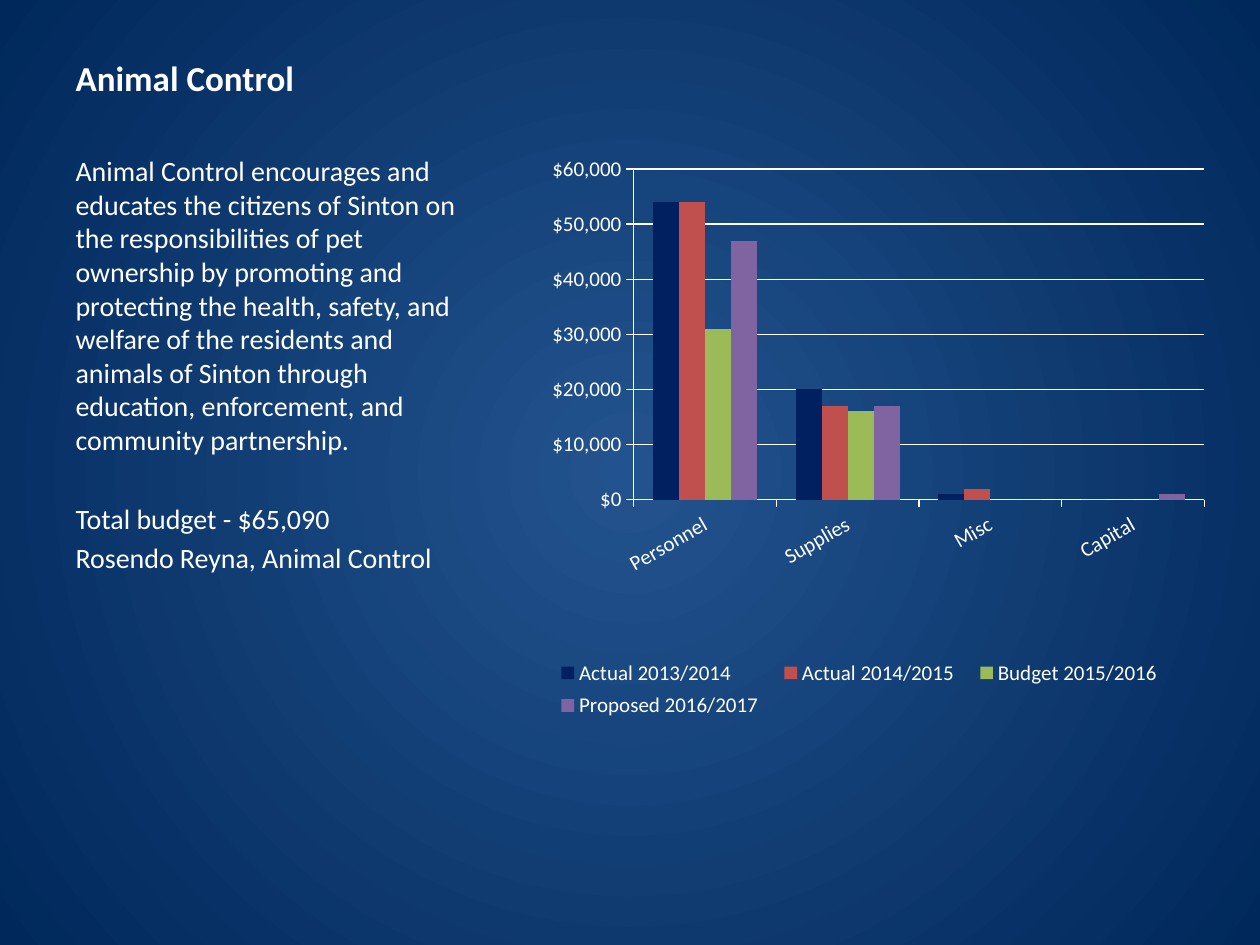
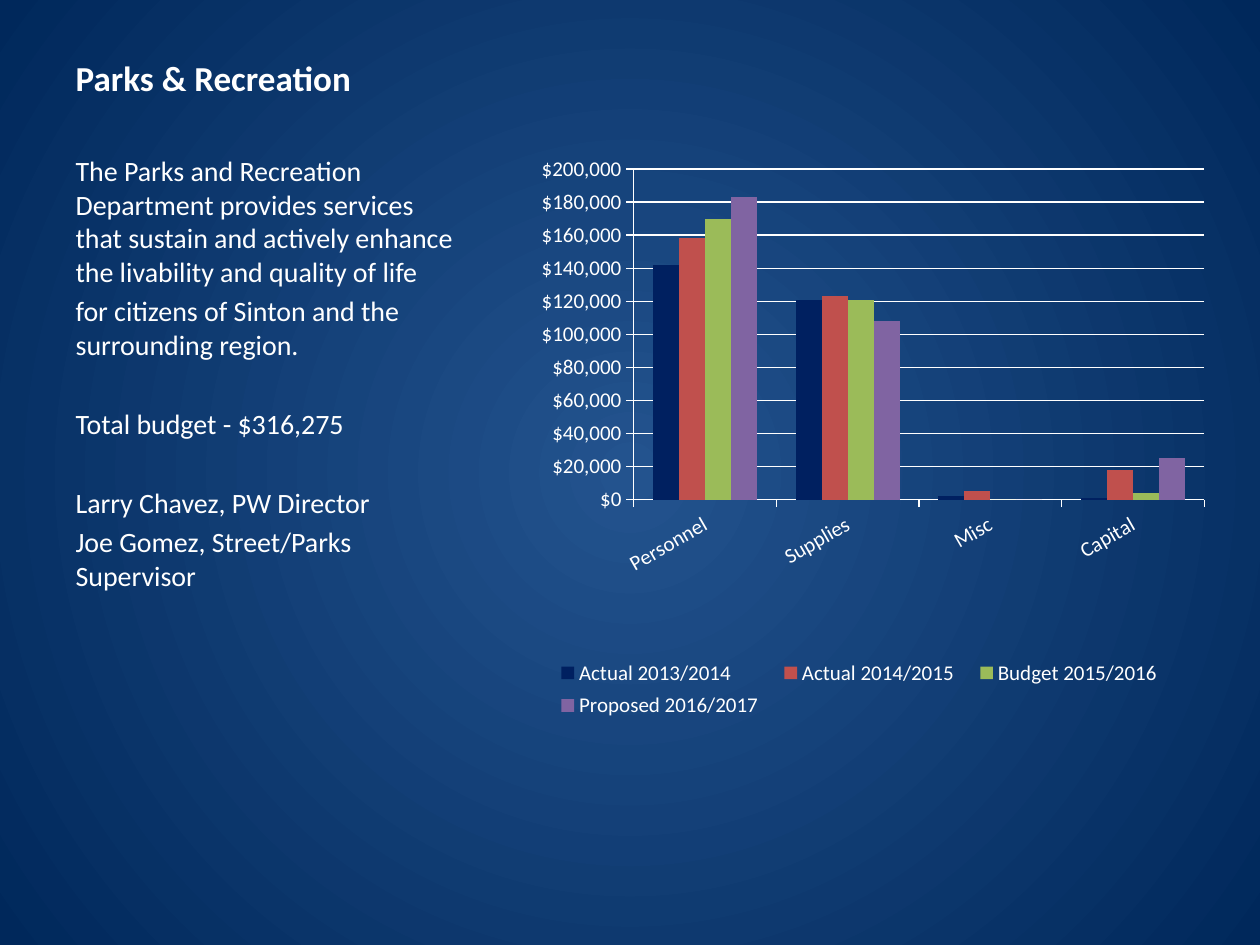
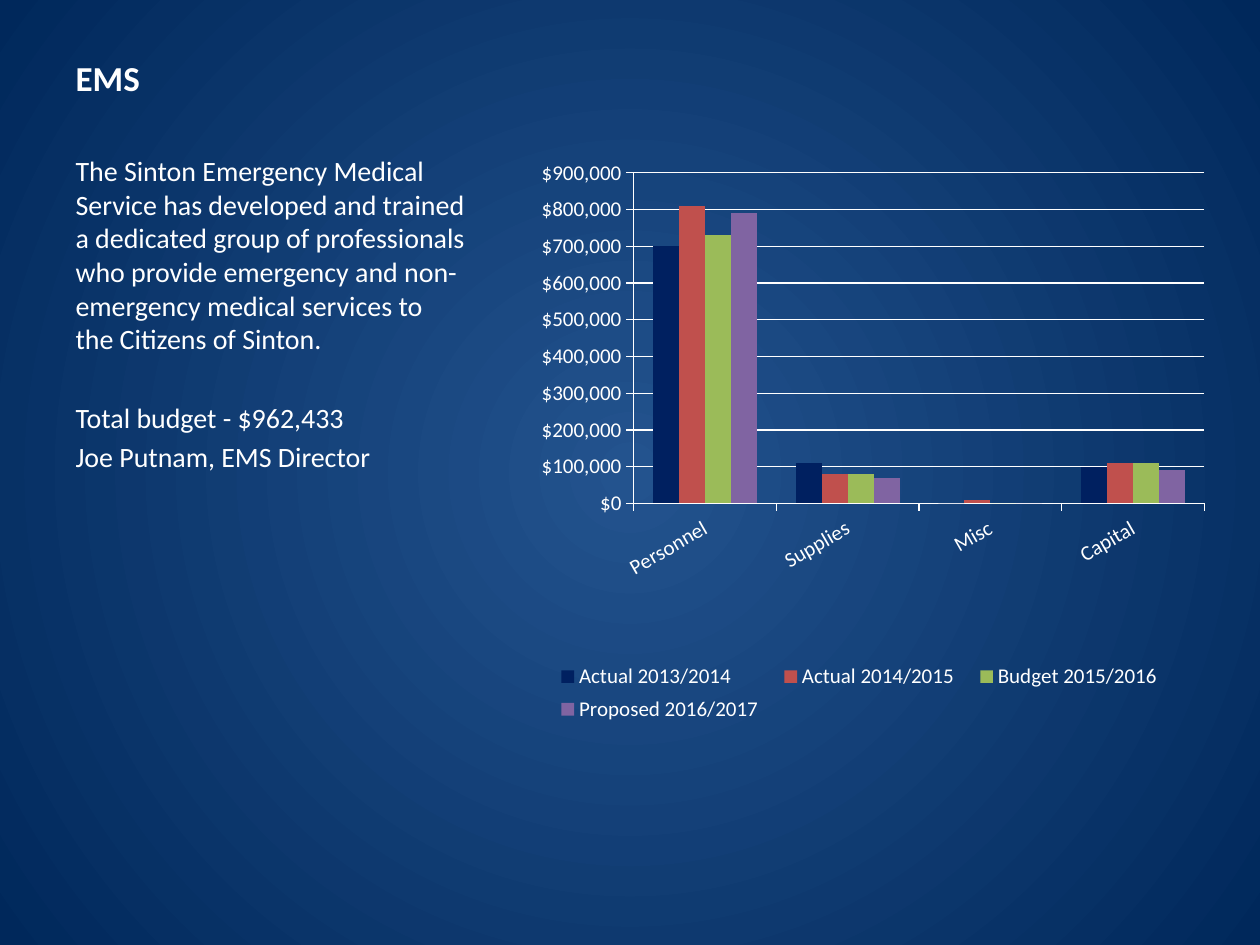
"""Build three department budget slides, each with a summary and a column chart."""
from lxml.etree import SubElement
from pptx import Presentation
from pptx.chart.data import CategoryChartData
from pptx.dml.color import RGBColor
from pptx.enum.chart import XL_CHART_TYPE, XL_LEGEND_POSITION, XL_TICK_MARK
from pptx.oxml import parse_xml
from pptx.oxml.ns import nsdecls, qn
from pptx.util import Inches, Pt

FONT = "Calibri"
WHITE = "FFFFFF"
CATEGORIES = ["Personnel", "Supplies", "Misc", "Capital"]
SERIES = [
    ("Actual 2013/2014", "002060"),
    ("Actual 2014/2015", "C0504D"),
    ("Budget 2015/2016", "9BBB59"),
    ("Proposed 2016/2017", "8064A2"),
]
DEPARTMENTS = [
    ("Animal Control", 0.83,
     [["Animal Control encourages and educates the citizens of Sinton on the "
       "responsibilities of pet ownership by promoting and protecting the health, "
       "safety, and welfare of the residents and animals of Sinton through "
       "education, enforcement, and community partnership."],
      ["Total budget - $65,090", "Rosendo Reyna, Animal Control"]],
     [(54000, 20000, 1000, 0), (54000, 17000, 2000, 0),
      (31000, 16000, 0, 0), (47000, 17000, 0, 1000)]),
    ("Parks & Recreation", 0.83,
     [["The Parks and Recreation Department provides services that sustain and "
       "actively enhance the livability and quality of life",
       "for citizens of Sinton and the surrounding region."],
      ["Total budget - $316,275"],
      ["Larry Chavez, PW Director", "Joe Gomez, Street/Parks Supervisor"]],
     [(142000, 121000, 2000, 1000), (158000, 123000, 5000, 18000),
      (170000, 121000, 0, 4000), (183000, 108000, 0, 25000)]),
    ("EMS", 0.86,
     [["The Sinton Emergency Medical Service has developed and trained a dedicated "
       "group of professionals who provide emergency and non-emergency medical "
       "services to the Citizens of Sinton."],
      ["Total budget - $962,433", "Joe Putnam, EMS Director"]],
     [(700000, 110000, 0, 100000), (810000, 80000, 10000, 110000),
      (730000, 80000, 0, 110000), (790000, 70000, 0, 90000)]),
]


def style(font, size, color=WHITE, bold=False):
    font.name, font.size, font.bold = FONT, Pt(size), bold
    font.color.rgb = RGBColor.from_string(color)


def manual_layout(x, y, w, h, inner=False):
    layout = parse_xml(f"<c:layout {nsdecls('c')}><c:manualLayout/></c:layout>")
    values = [("layoutTarget", "inner")] if inner else []
    values += [("xMode", "edge"), ("yMode", "edge"), ("x", x), ("y", y), ("w", w), ("h", h)]
    for tag, value in values:
        SubElement(layout[0], qn(f"c:{tag}")).set("val", str(value))
    return layout


prs = Presentation()
prs.slide_width, prs.slide_height = Inches(10), Inches(7.5)

master = prs.slide_master
fill = master.background.fill
fill.gradient()
for stop, color in zip(fill.gradient_stops, ("23538E", "00285B")):
    stop.color.rgb = RGBColor.from_string(color)
fill.gradient_stops[0].position, fill.gradient_stops[1].position = 0, 1
lin = master.element.find(".//" + qn("a:gradFill")).find(qn("a:lin"))
lin.getparent().replace(lin, parse_xml(
    f'<a:path {nsdecls("a")} path="circle">'
    '<a:fillToRect l="50000" t="50000" r="50000" b="50000"/></a:path>'))

for name, chart_top, groups, values in DEPARTMENTS:
    s = prs.slides.add_slide(prs.slide_layouts.get_by_name("Content with Caption"))
    unused = s.placeholders[1]
    unused.element.getparent().remove(unused.element)

    title, body = s.shapes.title, s.placeholders[2]
    for sp, top, height in ((title, 0.3, 0.53), (body, 1.17, 5.53)):
        sp.left, sp.top = Inches(0.5), Inches(top)
        sp.width, sp.height = Inches(3.29), Inches(height)
    title.text_frame.text = name
    style(title.text_frame.paragraphs[0].runs[0].font, 20, bold=True)

    tf = body.text_frame
    for g, group in enumerate(groups):
        for i, text in enumerate(group):
            p = tf.add_paragraph() if g or i else tf.paragraphs[0]
            p.text = text
            style(p.runs[0].font, 16)
            if g and i == 0:
                p.space_before = Pt(26)

    data = CategoryChartData(number_format='"$"#,##0')
    data.categories = CATEGORIES
    for (label, _), amounts in zip(SERIES, values):
        data.add_series(label, amounts)
    chart = s.shapes.add_chart(
        XL_CHART_TYPE.COLUMN_CLUSTERED, Inches(4.08), Inches(chart_top),
        Inches(5.59), Inches(6.4), data).chart
    style(chart.font, 18)
    chart.has_title = False

    plot = chart.plots[0]
    plot.gap_width, plot.overlap, plot.vary_by_categories = 150, 0, False
    for series, (_, color) in zip(plot.series, SERIES):
        series.format.fill.solid()
        series.format.fill.fore_color.rgb = RGBColor.from_string(color)

    cat_axis, val_axis = chart.category_axis, chart.value_axis
    val_axis.minimum_scale = 0
    val_axis.has_major_gridlines = True
    val_axis.tick_labels.number_format = '"$"#,##0'
    val_axis.tick_labels.number_format_is_linked = False
    for axis in (cat_axis, val_axis):
        axis.major_tick_mark = XL_TICK_MARK.OUTSIDE
        style(axis.tick_labels.font, 12)
    for line in (cat_axis.format.line, val_axis.format.line,
                 val_axis.major_gridlines.format.line):
        line.color.rgb = RGBColor.from_string(WHITE)
        line.width = Pt(0.75)
    cat_axis._element.find(".//" + qn("a:bodyPr")).set("rot", "-1800000")

    chart.has_legend = True
    legend = chart.legend
    legend.position = XL_LEGEND_POSITION.BOTTOM
    legend.include_in_layout = False
    style(legend.font, 12)

    plot_area = chart._chartSpace.find(".//" + qn("c:plotArea"))
    for old in plot_area.findall(qn("c:layout")):
        plot_area.remove(old)
    plot_area.insert(0, manual_layout(0.17, 0.08, 0.81, 0.41, inner=True))
    for old in legend._element.findall(qn("c:layout")):
        legend._element.remove(old)
    legend._element.find(qn("c:legendPos")).addnext(manual_layout(0.04, 0.68, 0.9, 0.09))

prs.save("out.pptx")
